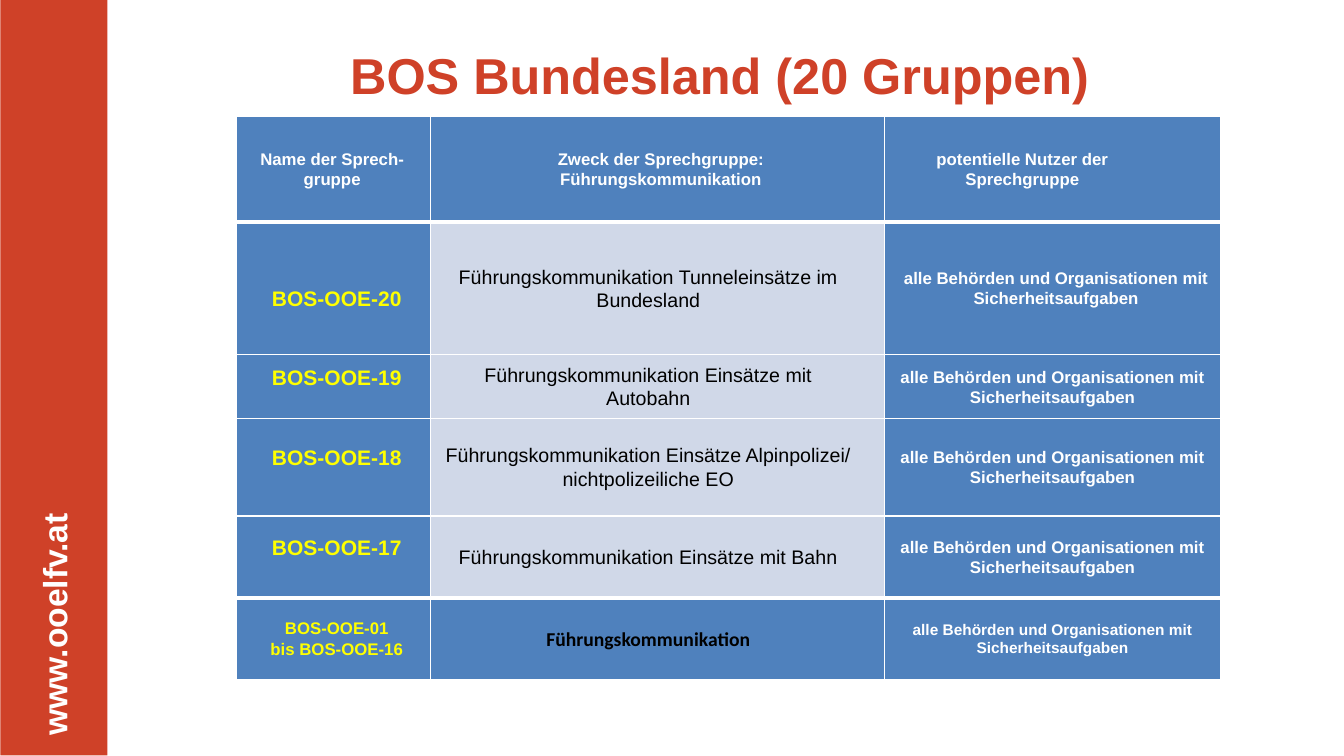
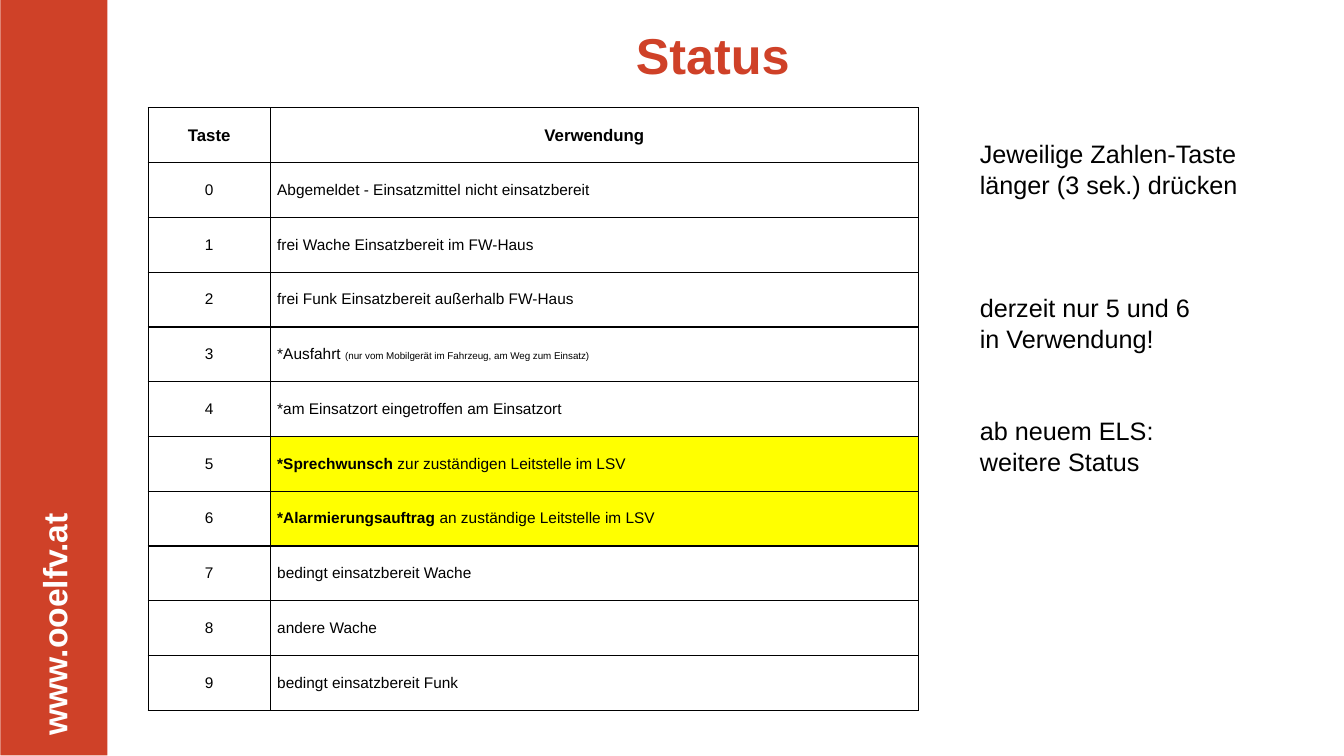
import pptx
import pptx.util
import pptx.dml.color
import pptx.enum.shapes
import pptx.enum.text
import pptx.oxml
import pptx.oxml.ns

Inches = pptx.util.Inches
Pt = pptx.util.Pt
Align = pptx.enum.text.PP_ALIGN
MIDDLE = pptx.enum.text.MSO_ANCHOR.MIDDLE

RED, BLUE, PALE = "CF4128", "4F81BD", "D0D8E8"
YELLOW, WHITE, BLACK = "FFFF00", "FFFFFF", "000000"
FONT = "Arial"


def color(code):
    return pptx.dml.color.RGBColor.from_string(code)


def paint(item, code):
    item.fill.solid()
    item.fill.fore_color.rgb = color(code)


def style(run, size, code=BLACK, bold=False, font=FONT):
    run.font.name = font
    run.font.size = Pt(size)
    run.font.bold = bold
    run.font.color.rgb = color(code)


def write(frame, text, size, code=BLACK, bold=False, font=FONT,
          align=Align.LEFT, pitch=None):
    """Set text in one style; \\n starts a paragraph, \\v a line."""
    frame.text = text
    for para in frame.paragraphs:
        para.alignment = align
        if pitch:
            para.line_spacing = pitch
        for run in para.runs:
            style(run, size, code, bold, font)


def band(slide):
    """Draw the red side band with its upright web address."""
    shape = slide.shapes.add_shape(
        pptx.enum.shapes.MSO_SHAPE.RECTANGLE,
        Inches(-3.22), Inches(3.21), Inches(7.51), Inches(1.06))
    shape.rotation = 270
    shape.shadow.inherit = False
    paint(shape, RED)
    shape.line.fill.background()
    frame = shape.text_frame
    frame.margin_left = Inches(0.2)
    frame.vertical_anchor = MIDDLE
    write(frame, "www.ooelfv.at", 24, WHITE, True)


def title(slide, text, left, top, height):
    box = slide.shapes.add_textbox(
        Inches(left), Inches(top), Inches(8.2), Inches(height))
    frame = box.text_frame
    frame.word_wrap = True
    frame.vertical_anchor = MIDDLE
    write(frame, text, 36, RED, True, align=Align.CENTER)


def page(deck, text, left, top, height):
    """Add a slide with the shared band and title."""
    slide = deck.slides.add_slide(deck.slide_layouts[6])
    band(slide)
    title(slide, text, left, top, height)
    return slide


def grid(slide, left, top, cols, rows):
    """Add a plain table with the given column widths and row heights."""
    table = slide.shapes.add_table(
        len(rows), len(cols), Inches(left), Inches(top),
        Inches(sum(cols)), Inches(sum(rows))).table
    table.horz_banding = False
    table.first_row = False
    for col, width in zip(table.columns, cols):
        col.width = Inches(width)
    for row, height in zip(table.rows, rows):
        row.height = Inches(height)
    return table


def pad(cell, left, right, top=0, bottom=0):
    cell.vertical_anchor = MIDDLE
    cell.margin_left, cell.margin_right = Inches(left), Inches(right)
    cell.margin_top, cell.margin_bottom = Inches(top), Inches(bottom)


def edge(cell, code, top=1, bottom=1):
    """Draw the four borders; call after the fill is set."""
    props = cell._tc.get_or_add_tcPr()
    sides = (("lnL", 1), ("lnR", 1), ("lnT", top), ("lnB", bottom))
    for index, (tag, width) in enumerate(sides):
        props.insert(index, pptx.oxml.parse_xml(
            f'<a:{tag} {pptx.oxml.ns.nsdecls("a")} w="{Pt(width)}">'
            f'<a:solidFill><a:srgbClr val="{code}"/></a:solidFill>'
            f'</a:{tag}>'))


def groups(deck):
    slide = page(deck, "BOS Bundesland (20 Gruppen)", 3.04, 0.44, 0.59)
    users = "alle Behörden und Organisationen mit Sicherheitsaufgaben"
    lead = "Führungskommunikation"
    heads = ("Name der Sprech-gruppe",
             f"Zweck der Sprechgruppe:\n{lead}",
             "potentielle Nutzer der Sprechgruppe")
    body = (
        ("BOS-OOE-20", f"{lead} Tunneleinsätze im Bundesland"),
        ("BOS-OOE-19", f"{lead} Einsätze mit Autobahn"),
        ("BOS-OOE-18",
         f"{lead} Einsätze Alpinpolizei/ nichtpolizeiliche EO"),
        ("BOS-OOE-17", f"{lead} Einsätze mit Bahn"),
        ("BOS-OOE-01\vbis BOS-OOE-16", lead),
    )
    table = grid(slide, 2.34, 1.15, (1.93, 4.5, 3.34),
                 (1.05, 1.32, 0.63, 0.97, 0.81, 0.81))
    last = len(body)

    def fill(row, col, text, size, code, bold=True, font=FONT,
             back=BLUE, **gaps):
        cell = table.cell(row, col)
        pad(cell, **gaps)
        write(cell.text_frame, text, size, code, bold, font,
              Align.CENTER, 1.07)
        paint(cell, back)
        edge(cell, WHITE, 3 if row in (1, last) else 1,
             3 if row in (0, last - 1) else 1)

    for col, (text, right) in enumerate(zip(heads, (0.15, 0.06, 0.73))):
        fill(0, col, text, 12, WHITE, left=0.13, right=right)
    for row, (name, use) in enumerate(body, 1):
        end = row == last
        fill(row, 0, name, 12 if end else 15, YELLOW, left=0.13, right=0.06,
             top=0.2 if row == 1 else 0,
             bottom=0.19 if 1 < row < last else 0)
        fill(row, 1, use, 14, BLACK, end, "Calibri" if end else FONT,
             BLUE if end else PALE, left=0.13, right=0.31)
        fill(row, 2, users, 11 if end else 12, WHITE,
             left=0.13 if row == 1 else 0.06, right=0.06)


def keys(slide):
    """Table of the number keys; each use is a list of runs."""
    uses = (
        [("Abgemeldet - Einsatzmittel nicht einsatzbereit", 11, False)],
        [("frei Wache Einsatzbereit im FW-Haus", 11, False)],
        [("frei Funk Einsatzbereit außerhalb FW-Haus", 11, False)],
        [("*Ausfahrt ", 11, False),
         ("(nur vom Mobilgerät im Fahrzeug, am Weg zum Einsatz)", 7, False)],
        [("*am Einsatzort eingetroffen am Einsatzort", 11, False)],
        [("*Sprechwunsch", 11, True),
         (" zur zuständigen Leitstelle im LSV", 11, False)],
        [("*Alarmierungsauftrag", 11, True),
         (" an zuständige Leitstelle im LSV", 11, False)],
        [("bedingt einsatzbereit Wache", 11, False)],
        [("andere Wache", 11, False)],
        [("bedingt einsatzbereit Funk", 11, False)],
    )
    count = len(uses) + 1
    table = grid(slide, 1.47, 1.07, (1.21, 6.43), [5.98 / count] * count)
    for col, text in enumerate(("Taste", "Verwendung")):
        write(table.cell(0, col).text_frame, text, 12, bold=True,
              align=Align.CENTER)
    for key, parts in enumerate(uses):
        write(table.cell(key + 1, 0).text_frame, str(key), 11,
              align=Align.CENTER)
        para = table.cell(key + 1, 1).text_frame.paragraphs[0]
        for text, size, bold in parts:
            run = para.add_run()
            run.text = text
            style(run, size, bold=bold)
    marked = [table.cell(key + 1, 1) for key in (5, 6)]
    for cell in table.iter_cells():
        pad(cell, 0.07, 0.07)
        paint(cell, YELLOW if cell in marked else WHITE)
        edge(cell, BLACK)


def notes(slide):
    box = slide.shapes.add_textbox(
        Inches(9.62), Inches(1.31), Inches(2.84), Inches(3.43))
    frame = box.text_frame
    frame.word_wrap = False
    write(frame, "Jeweilige Zahlen-Taste\vlänger (3 sek.) drücken\n"
          "derzeit nur 5 und 6\vin Verwendung!\n"
          "ab neuem ELS:\vweitere Status", 18, pitch=1.04)
    for para, gap in zip(frame.paragraphs, (0, 65, 43)):
        para.space_before = Pt(gap)


def status(deck):
    slide = page(deck, "Status", 2.97, 0.17, 0.74)
    keys(slide)
    notes(slide)


def main():
    deck = pptx.Presentation()
    deck.slide_width, deck.slide_height = Inches(13.33), Inches(7.5)
    groups(deck)
    status(deck)
    deck.save("out.pptx")


if __name__ == "__main__":
    main()
